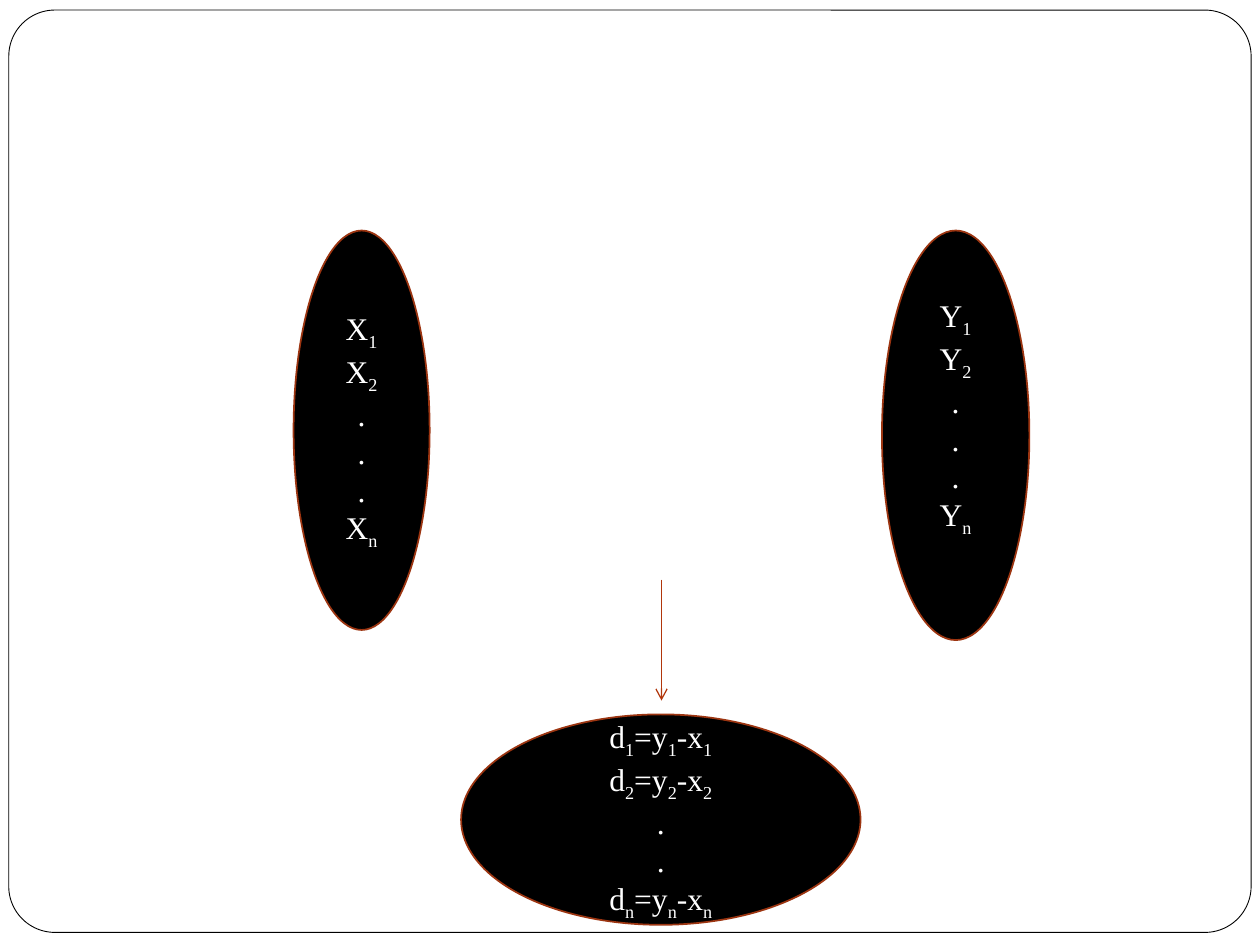
from lxml import etree
from pptx import Presentation
from pptx.dml.color import RGBColor
from pptx.enum import shapes, text
from pptx.oxml.ns import qn
from pptx.util import Inches, Pt

COLORS = {"white": "FFFFFF", "black": "000000", "rust": "9C3511", "arrow": "B1360B"}
FONT = {"name": "Times New Roman", "size": Pt(18)}

# Content: each line alternates normal text and subscript
DOT = (".",)
FRAME = (0.07, 0.08, 9.86, 7.32)
SETS = [
    {"box": (2.33, 1.83, 1.08, 3.17), "bottom": 0.05,
     "lines": [("X", "1"), ("X", "2"), DOT, DOT, DOT, ("X", "n")]},
    {"box": (7, 1.83, 1.17, 3.25), "bottom": 0.34,
     "lines": [("Y", "1"), ("Y", "2"), DOT, DOT, DOT, ("Y", "n")]},
    {"box": (3.66, 5.67, 3.17, 1.67), "bottom": 0.05,
     "lines": [("d", "1", "=y", "1", "-x", "1"),
               ("d", "2", "=y", "2", "-x", "2"), DOT, DOT,
               ("d", "n", "=y", "n", "-x", "n")]},
]
ARROW = (5.25, 4.6, 5.25, 5.56)


def color(name):
    return RGBColor.from_string(COLORS[name])


def add_outlined(slide, kind, box, fill, line, width):
    shape = slide.shapes.add_shape(kind, *map(Inches, box))
    shape.shadow.inherit = False
    shape.fill.solid()
    shape.fill.fore_color.rgb = color(fill)
    shape.line.color.rgb = color(line)
    shape.line.width = Pt(width)
    return shape


def add_line_of_text(paragraph, parts):
    paragraph.alignment = text.PP_ALIGN.CENTER
    for index, part in enumerate(parts):
        run = paragraph.add_run()
        run.text = part
        for name, value in FONT.items():
            setattr(run.font, name, value)
        run.font.color.rgb = color("white")
        if index % 2:
            run.font._element.set("baseline", "-25000")


def add_set(slide, box, bottom, lines):
    shape = add_outlined(slide, shapes.MSO_SHAPE.OVAL, box, "black", "rust", 1)
    frame = shape.text_frame
    frame.word_wrap = True
    frame.vertical_anchor = text.MSO_ANCHOR.MIDDLE
    frame.margin_bottom = Inches(bottom)
    for index, parts in enumerate(lines):
        paragraph = frame.add_paragraph() if index else frame.paragraphs[0]
        add_line_of_text(paragraph, parts)


def add_arrow(slide, ends):
    arrow = slide.shapes.add_connector(shapes.MSO_CONNECTOR.STRAIGHT, *map(Inches, ends))
    arrow.line.color.rgb = color("arrow")
    arrow.line.width = Pt(0.75)
    properties = arrow._element.spPr
    etree.SubElement(properties.find(qn("a:ln")), qn("a:tailEnd"), type="arrow")
    etree.SubElement(properties, qn("a:effectLst"))


def main():
    presentation = Presentation()
    presentation.slide_width, presentation.slide_height = Inches(10), Inches(7.5)
    slide = presentation.slides.add_slide(presentation.slide_layouts[6])

    # Rounded frame around the slide
    frame = add_outlined(slide, shapes.MSO_SHAPE.ROUNDED_RECTANGLE, FRAME,
                         "white", "black", 0.5)
    frame.adjustments[0] = 0.05

    # Paired samples and their differences
    for item in SETS:
        add_set(slide, **item)
    add_arrow(slide, ARROW)

    presentation.save("out.pptx")


if __name__ == "__main__":
    main()
